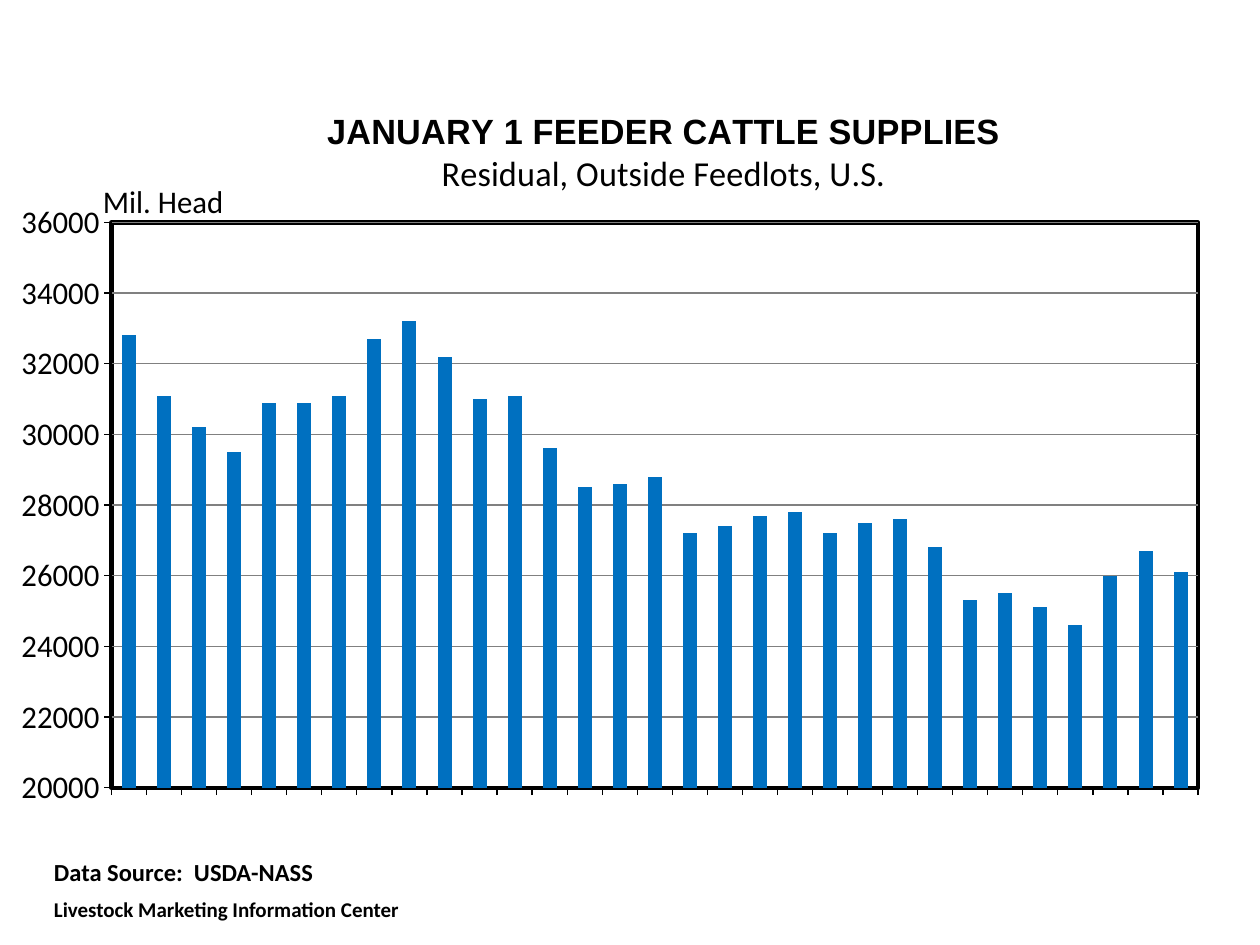
from pptx import Presentation
from pptx.chart.data import CategoryChartData
from pptx.dml.color import RGBColor
from pptx.enum.chart import XL_CHART_TYPE as ChartType
from pptx.enum.chart import XL_TICK_LABEL_POSITION as LabelPosition
from pptx.enum.chart import XL_TICK_MARK as TickMark
from pptx.oxml import parse_xml
from pptx.oxml.ns import nsdecls, qn
from pptx.util import Inches, Pt

COLORS = {"text": "000000", "bar": "0070C0", "grid": "808080", "plot": "FFFFFF"}
YEARS = range(1988, 2019)
SUPPLIES = [
    32800, 31100, 30200, 29500, 30900, 30900, 31100, 32700, 33200, 32200, 31000,
    31100, 29600, 28500, 28600, 28800, 27200, 27400, 27700, 27800, 27200, 27500,
    27600, 26800, 25300, 25500, 25100, 24600, 26000, 26700, 26100,
]


def color(name):
    return RGBColor.from_string(COLORS[name])


def style_font(font, size, bold=False, name="Calibri"):
    font.name = name
    font.size = Pt(size)
    font.bold = bold
    font.color.rgb = color("text")


def set_layout(element, index, x, y, size=None):
    """Place a chart part by fractions of the chart; size is for the inner plot."""
    for old in element.findall(qn("c:layout")):
        element.remove(old)
    values = {"xMode": "edge", "yMode": "edge", "x": x, "y": y}
    if size:
        values = {"layoutTarget": "inner", **values, "w": size[0], "h": size[1]}
    parts = "".join(f'<c:{tag} val="{value}"/>' for tag, value in values.items())
    element.insert(index, parse_xml(
        f'<c:layout {nsdecls("c")}><c:manualLayout>{parts}</c:manualLayout></c:layout>'))


def style_plot_area(chart):
    plot_area = chart.element.find(".//" + qn("c:plotArea"))
    set_layout(plot_area, 0, 0.052, 0.185, (0.913, 0.758))
    plot_area.append(parse_xml(
        f'<c:spPr {nsdecls("c", "a")}>'
        f'<a:solidFill><a:srgbClr val="{COLORS["plot"]}"/></a:solidFill>'
        f'<a:ln w="{Pt(2.5)}"><a:solidFill><a:srgbClr val="{COLORS["text"]}"/>'
        '</a:solidFill></a:ln></c:spPr>'))


def style_titles(chart):
    chart.has_title = True
    frame = chart.chart_title.text_frame
    frame.text = "JANUARY 1 FEEDER CATTLE SUPPLIES\nResidual, Outside Feedlots, U.S."
    heading, subheading = frame.paragraphs
    style_font(heading.font, 20, True, "Arial")
    style_font(subheading.font, 20)
    set_layout(chart.chart_title.element, 1, 0.23, 0.03)

    unit = chart.value_axis.axis_title
    unit.text_frame.text = "Mil. Head"
    style_font(unit.text_frame.paragraphs[0].font, 18)
    unit.text_frame.element.find(qn("a:bodyPr")).set("rot", "0") if hasattr(
        unit.text_frame, "element") else None
    body = unit.element.find(".//" + qn("a:bodyPr"))
    body.set("rot", "0")
    body.set("vert", "horz")
    set_layout(unit.element, 1, 0.04, 0.12)


def style_axes(chart):
    years, heads = chart.category_axis, chart.value_axis
    for axis in (years, heads):
        axis.major_tick_mark = TickMark.OUTSIDE
        axis.minor_tick_mark = TickMark.NONE
        axis.format.line.color.rgb = color("text")
        axis.format.line.width = Pt(0.75)
    years.tick_label_position = LabelPosition.NONE
    heads.minimum_scale, heads.maximum_scale, heads.major_unit = 20000, 36000, 2000
    heads.has_major_gridlines = True
    heads.major_gridlines.format.line.color.rgb = color("grid")
    heads.major_gridlines.format.line.width = Pt(0.75)
    heads.tick_labels.number_format = "General"
    heads.tick_labels.number_format_is_linked = False
    style_font(heads.tick_labels.font, 18)


def add_supply_chart(page, left, top, width, height):
    data = CategoryChartData()
    data.categories = [str(year) for year in YEARS]
    data.add_series("Series 1", SUPPLIES)
    chart = page.shapes.add_chart(
        ChartType.COLUMN_CLUSTERED, left, top, width, height, data).chart
    style_font(chart.font, 18)
    chart.has_legend = False
    plot = chart.plots[0]
    plot.gap_width = 150
    plot.vary_by_categories = False
    fill = plot.series[0].format.fill
    fill.solid()
    fill.fore_color.rgb = color("bar")
    style_axes(chart)
    style_titles(chart)
    style_plot_area(chart)


def add_source_note(page, left, top, width, height):
    frame = page.shapes.add_textbox(left, top, width, height).text_frame
    frame.word_wrap = True
    frame.text = "Data Source:  USDA-NASS\nLivestock Marketing Information Center"
    source, center = frame.paragraphs
    style_font(source.font, 14, True)
    style_font(center.font, 12, True)
    center.space_before = Pt(6)


def main():
    deck = Presentation()
    deck.slide_width, deck.slide_height = Inches(10), Inches(7.5)
    page = deck.slides.add_slide(deck.slide_layouts[6])
    add_supply_chart(page, Inches(0.17), Inches(0.67), Inches(9.67), Inches(5.92))
    add_source_note(page, Inches(0.33), Inches(6.75), Inches(4.5), Inches(0.64))
    deck.save("out.pptx")


if __name__ == "__main__":
    main()
